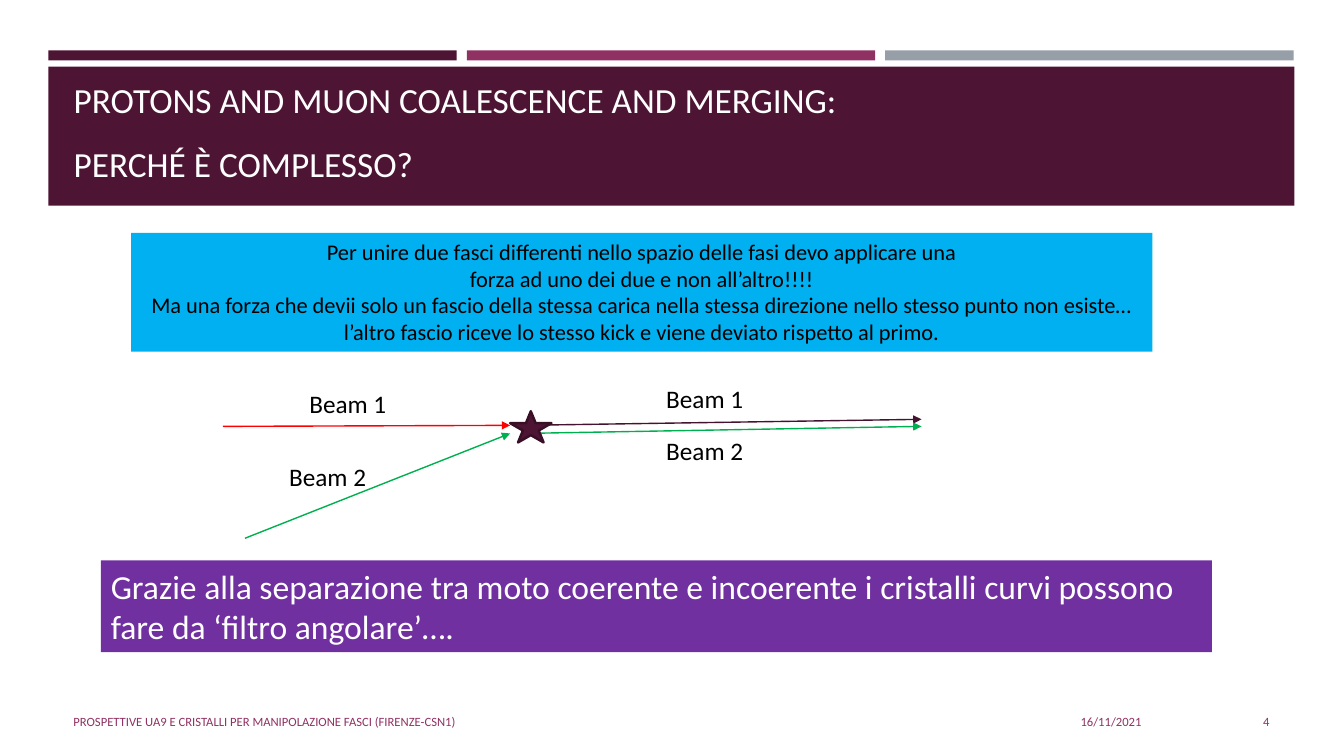
import lxml.etree
import pptx
import pptx.util
import pptx.dml.color
import pptx.enum.shapes
import pptx.enum.text
import pptx.oxml.ns

Inches = pptx.util.Inches
Pt = pptx.util.Pt
SHAPE = pptx.enum.shapes.MSO_SHAPE
ALIGN = pptx.enum.text.PP_ALIGN
ANCHOR = pptx.enum.text.MSO_ANCHOR
AUTO_SIZE = pptx.enum.text.MSO_AUTO_SIZE

FONT = "Calibri"
COLORS = {
    "plum": "4D1434", "magenta": "903163", "grey": "969FA7",
    "plum_line": "45122F", "star_edge": "390F26",
    "cyan": "00B0F0", "violet": "7030A0",
    "red": "FF0000", "green": "00B050",
    "black": "000000", "white": "FFFFFF",
}


def rgb(color):
    return pptx.dml.color.RGBColor.from_string(COLORS[color])


def add_filled(slide, kind, box, fill):
    shape = slide.shapes.add_shape(kind, *map(Inches, box))
    shape.shadow.inherit = False
    shape.fill.solid()
    shape.fill.fore_color.rgb = rgb(fill)
    shape.line.fill.background()
    return shape


def write(frame, lines, size, color, align=ALIGN.LEFT, anchor=ANCHOR.TOP, wrap=False):
    frame.text = "\n".join(lines)
    frame.word_wrap = wrap
    frame.auto_size = AUTO_SIZE.NONE if wrap else AUTO_SIZE.SHAPE_TO_FIT_TEXT
    frame.vertical_anchor = anchor
    for paragraph in frame.paragraphs:
        paragraph.alignment = align
        paragraph.font.name = FONT
        paragraph.font.size = Pt(size)
        paragraph.font.color.rgb = rgb(color)


def add_label(slide, box, text, size, color, **layout):
    label = slide.shapes.add_textbox(*map(Inches, box))
    write(label.text_frame, [text], size, color, **layout)


def add_arrow(slide, start, end, color):
    arrow = slide.shapes.add_connector(
        pptx.enum.shapes.MSO_CONNECTOR.STRAIGHT, *map(Inches, start + end))
    arrow.line.color.rgb = rgb(color)
    arrow.line.width = Pt(1)
    qn = pptx.oxml.ns.qn
    properties = arrow._element.find(qn("p:spPr"))
    lxml.etree.SubElement(properties.find(qn("a:ln")), qn("a:tailEnd"), type="triangle")
    lxml.etree.SubElement(properties, qn("a:effectLst"))


def add_header(slide, left, top, width):
    # Three stripes above the title band
    stripe, pitch = 4.05, 4.15
    for i, color in enumerate(("plum", "magenta", "grey")):
        add_filled(slide, SHAPE.RECTANGLE, (left + i * pitch, top, stripe, 0.1), color)
    add_filled(slide, SHAPE.RECTANGLE, (left, top + 0.16, width, 1.38), "plum")

    # Title, brought in front of its band
    title = slide.shapes.title
    title.left, title.top = Inches(left + 0.15), Inches(top + 0.3)
    title.width, title.height = Inches(width - 0.3), Inches(1.08)
    write(title.text_frame,
          ["PROTONS AND MUON COALESCENCE AND MERGING:\vPERCHÉ È COMPLESSO?"],
          25.2, "white", anchor=ANCHOR.BOTTOM, wrap=True)
    title.text_frame.paragraphs[0].line_spacing = 1.5
    slide.shapes._spTree.append(title._element)


def add_panel(slide, box, fill, lines, size, color, align):
    panel = add_filled(slide, SHAPE.RECTANGLE, box, fill)
    write(panel.text_frame, lines, size, color, align)


def add_beam_diagram(slide, left, top):
    def at(x, y):
        return (left + x, top + y)

    # Incoming and outgoing beams
    for start, end, color in (
        (at(0.22, 1.59), at(2.85, 0.55), "green"),
        (at(0, 0.48), at(2.85, 0.47), "red"),
        (at(2.98, 0.47), at(6.93, 0.41), "plum_line"),
        (at(2.98, 0.55), at(6.93, 0.48), "green"),
    ):
        add_arrow(slide, start, end, color)

    # Merging point
    star = add_filled(slide, SHAPE.STAR_5_POINT, at(2.85, 0.33) + (0.41, 0.31), "plum")
    star.line.color.rgb = rgb("star_edge")
    star.line.width = Pt(1.75)

    # Beam names
    for name, place in (("Beam 1", at(0.76, 0.05)), ("Beam 2", at(0.56, 0.78)),
                        ("Beam 1", at(4.3, 0)), ("Beam 2", at(4.3, 0.52))):
        add_label(slide, place + (0.97, 0.4), name, 18, "black")


def add_footer(slide, top):
    for left, width, text, align in (
        (0.63, 7.56, "PROSPETTIVE UA9 E CRISTALLI PER MANIPOLAZIONE FASCI (FIRENZE-CSN1)",
         ALIGN.LEFT),
        (8.31, 3.11, "16/11/2021", ALIGN.RIGHT),
        (11.54, 1.15, "4", ALIGN.RIGHT),
    ):
        add_label(slide, (left, top, width, 0.4), text, 9, "magenta",
                  align=align, anchor=ANCHOR.MIDDLE, wrap=True)


def main():
    deck = pptx.Presentation()
    deck.slide_width, deck.slide_height = Inches(13.33), Inches(7.5)
    slide = deck.slides.add_slide(deck.slide_layouts[5])

    add_header(slide, 0.48, 0.5, 12.36)
    add_panel(slide, (1.3, 2.31, 10.13, 1.18), "cyan", [
        "Per unire due fasci differenti nello spazio delle fasi devo applicare una",
        "forza ad uno dei due e non all’altro!!!!",
        "Ma una forza che devii solo un fascio della stessa carica nella stessa "
        "direzione nello stesso punto non esiste…",
        "l’altro fascio riceve lo stesso kick e viene deviato rispetto al primo.",
    ], 16, "black", ALIGN.CENTER)
    add_beam_diagram(slide, 2.21, 3.75)
    add_panel(slide, (1, 5.56, 11.02, 0.91), "violet", [
        "Grazie alla separazione tra moto coerente e incoerente i cristalli curvi possono",
        "fare da ‘filtro angolare’….",
    ], 24, "white", ALIGN.LEFT)
    add_footer(slide, 6.96)

    deck.save("out.pptx")


if __name__ == "__main__":
    main()
